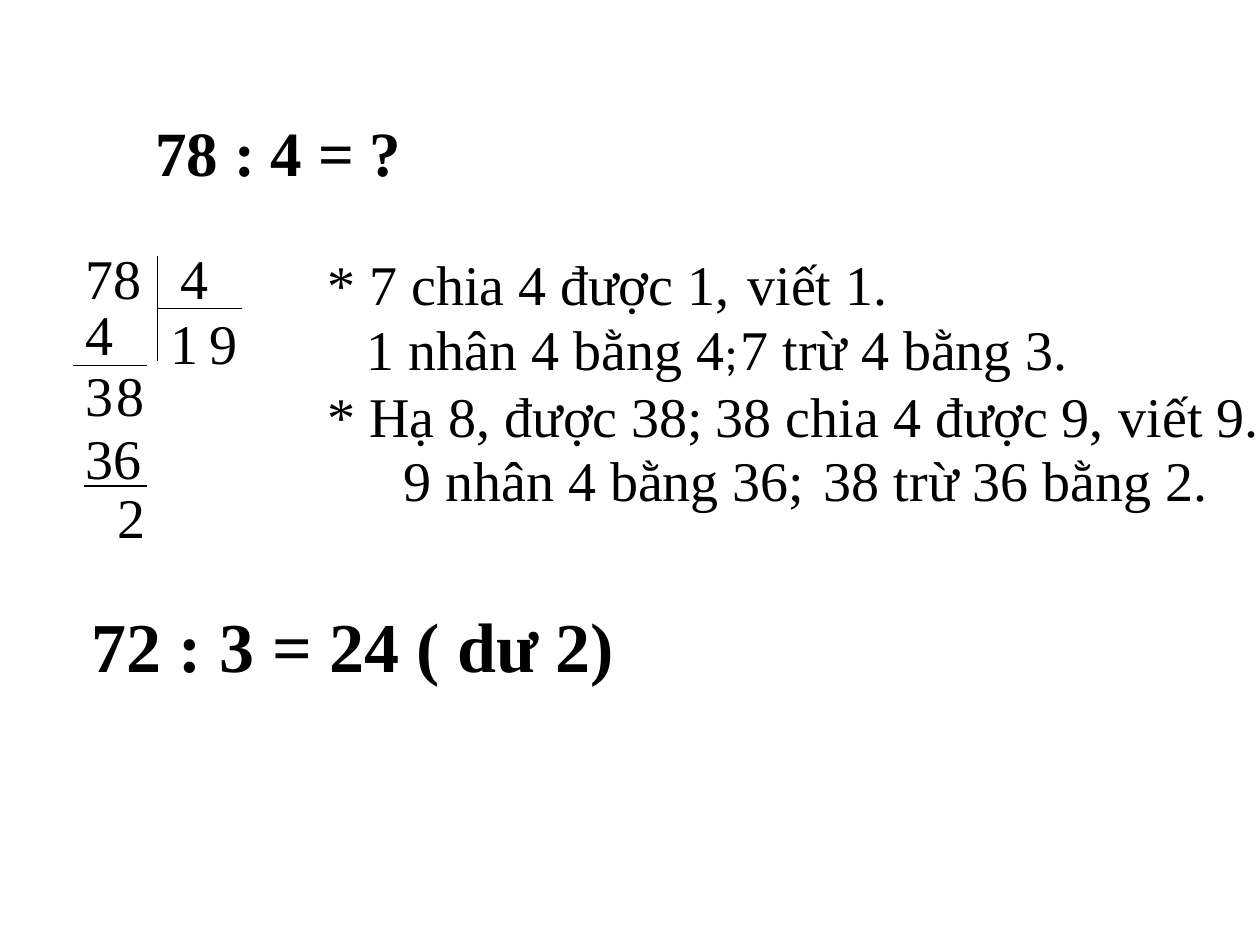
from lxml.etree import SubElement
from pptx import Presentation
from pptx.dml.color import RGBColor
from pptx.enum.shapes import MSO_CONNECTOR
from pptx.enum.text import MSO_ANCHOR, MSO_AUTO_SIZE, PP_ALIGN
from pptx.oxml.ns import qn
from pptx.util import Cm, Pt

THEME = {
    "ink": RGBColor(0, 0, 0),
    "font": "Times New Roman", "accent_font": "Calibri",
    "question": 36, "answer": 40, "body": 32, "mark": 28, "small": 18,
    "rule": 0.75,
}
LINE_HEIGHT = 1.6

# Headings: text and box (left, top, width, height) in cm
QUESTION = ("78 : 4 = ?", (-1.48, 1.78, 14.18, 2.54))
ANSWER = ("72 : 3 = 24 ( dư 2)", (-3.68, 11.72, 21.59, 2.54))

# Long division: top of each row, then (digits, left, width)
DIVISION = [
    (4.78, [("78", 1.48, 1.9), ("4", 3.39, 0.85)]),
    (5.92, [("4", 1.48, 1.48)]),
    (6.1, [("1", 3.18, 0.85), ("9", 3.97, 1.7)]),
    (7.14, [("3", 1.48, 1.06), ("8", 2.09, 1.06)]),
    (8.41, [("36", 1.48, 1.86)]),
    (9.6, [("2", 2.12, 1.27)]),
]
# Rules of the division: x1, y1, x2, y2
RULES = [
    (3.18, 5.16, 3.18, 7.27),
    (3.18, 6.22, 4.87, 6.22),
    (1.48, 7.37, 2.96, 7.37),
    (1.69, 9.8, 2.96, 9.8),
]
# Explanation: top of each row, then (text, left, width, closing mark, mark size)
STEPS = [
    (4.9, [("* 7 chia 4 được 1,", 6.35, 9.1, " ", "mark"),
           ("viết 1.", 14.82, 4.66, "", "")]),
    (6.22, [("1 nhân 4 bằng 4", 7.14, 8.05, ";", "mark"),
            ("7 trừ 4 bằng 3.", 14.68, 8.05, "", "")]),
    (7.57, [("* Hạ 8, được 38;", 6.35, 10.16, " ", "small"),
            ("38 chia 4 được 9,", 14.18, 13.49, "", ""),
            (" viết 9.", 22.02, 3.92, "", "")]),
    (8.85, [("9 nhân 4 bằng 36;", 7.88, 8.89, "", ""),
            ("38 trừ 36 bằng 2.", 16.36, 9.04, "", "")]),
]


def style(run, size, font="font", bold=False):
    run.font.name = THEME[font]
    run.font.size = Pt(THEME[size])
    run.font.bold = bold
    run.font.color.rgb = THEME["ink"]


def write_heading(shape, heading, size):
    text, box = heading
    shape.left, shape.top, shape.width, shape.height = map(Cm, box)
    frame = shape.text_frame
    frame.text = text
    frame.word_wrap = True
    frame.vertical_anchor = MSO_ANCHOR.MIDDLE
    paragraph = frame.paragraphs[0]
    paragraph.alignment = PP_ALIGN.CENTER
    style(paragraph.runs[0], size, bold=True)


def write_label(slide, text, left, top, width, mark="", mark_size=""):
    frame = slide.shapes.add_textbox(
        Cm(left), Cm(top), Cm(width), Cm(LINE_HEIGHT)).text_frame
    frame.word_wrap = True
    frame.auto_size = MSO_AUTO_SIZE.SHAPE_TO_FIT_TEXT
    paragraph = frame.paragraphs[0]
    paragraph.text = text
    style(paragraph.runs[0], "body")
    if mark:
        closing = paragraph.add_run()
        closing.text = mark
        style(closing, mark_size, "accent_font")


def draw_rule(slide, ends):
    rule = slide.shapes.add_connector(MSO_CONNECTOR.STRAIGHT, *map(Cm, ends))
    rule.line.color.rgb = THEME["ink"]
    rule.line.width = Pt(THEME["rule"])
    SubElement(rule._element.spPr, qn("a:effectLst"))


def main():
    deck = Presentation()
    deck.slide_width, deck.slide_height = Cm(25.4), Cm(19.05)
    slide = deck.slides.add_slide(deck.slide_layouts[5])

    # Question and answer
    write_heading(slide.shapes.title, QUESTION, "question")
    write_heading(slide.shapes.add_textbox(0, 0, 0, 0), ANSWER, "answer")

    # Division and its explanation
    for top, labels in DIVISION + STEPS:
        for text, left, width, *mark in labels:
            write_label(slide, text, left, top, width, *mark)
    for ends in RULES:
        draw_rule(slide, ends)

    deck.save("out.pptx")


if __name__ == "__main__":
    main()
